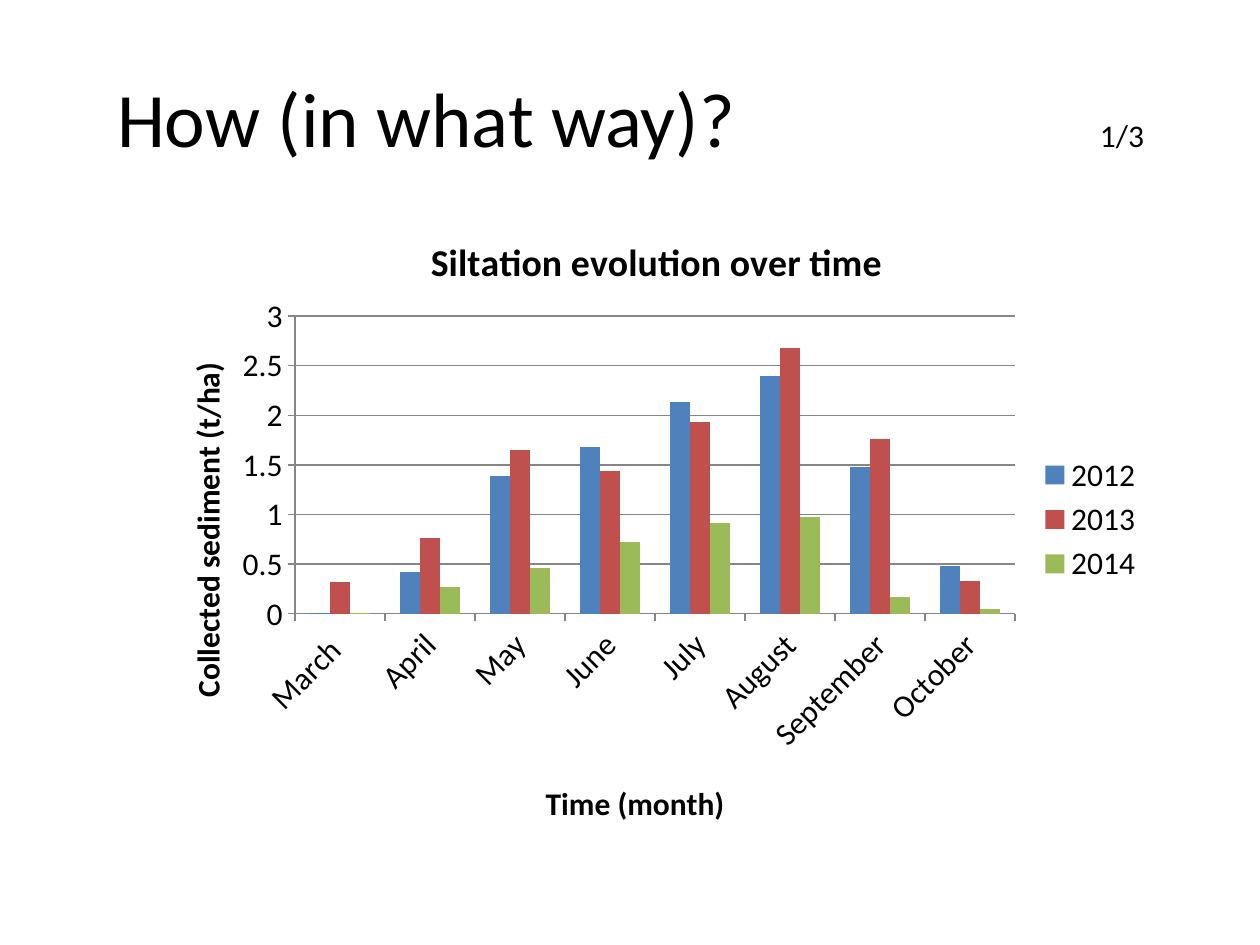
from lxml import etree
from pptx import Presentation
from pptx import util as u
from pptx.chart.data import CategoryChartData
from pptx.dml.color import RGBColor
from pptx.enum import chart as kinds, text
from pptx.oxml.ns import qn

SCALE = 914400 / 126
FONT = "Calibri"
COLOURS = {"text": "000000", "line": "868686",
           "2012": "4F81BD", "2013": "C0504D", "2014": "9BBB59"}
MONTHS = ["March ", "April", "May", "June", "July", "August", "September", "October"]
SEDIMENT = {
    "2012": [0.01, 0.42, 1.39, 1.68, 2.13, 2.39, 1.48, 0.48],
    "2013": [0.32, 0.76, 1.65, 1.44, 1.93, 2.68, 1.76, 0.33],
    "2014": [0.01, 0.27, 0.46, 0.72, 0.91, 0.98, 0.17, 0.05],
}


def px(length):
    """Turn px into EMU."""
    return u.Emu(round(length * SCALE))


def colour(name):
    """Look up a named colour."""
    return RGBColor.from_string(COLOURS[name])


def apply(target, **values):
    """Set each given attribute on the target."""
    for name, value in values.items():
        setattr(target, name, value)


def style_font(font, size, bold=False):
    """Give a font the deck's typeface and colour."""
    apply(font, name=FONT, size=u.Pt(size), bold=bold)
    font.color.rgb = colour("text")


def set_layout(parent, index, box, **fractions):
    """Fix a chart part at px within the chart box."""
    for old in parent.findall(qn("c:layout")):
        parent.remove(old)
    layout = etree.Element(qn("c:layout"))
    manual = etree.SubElement(layout, qn("c:manualLayout"))
    if "w" in fractions:
        etree.SubElement(manual, qn("c:layoutTarget"), val="inner")
    for mode in ("xMode", "yMode"):
        etree.SubElement(manual, qn(f"c:{mode}"), val="edge")
    for name, length in fractions.items():
        whole = box[2] if name in "xw" else box[3]
        etree.SubElement(manual, qn(f"c:{name}"), val=f"{length / whole:.4f}")
    parent.insert(index, layout)


def add_title(page, box, heading, counter):
    """Place the heading at the left and the counter at a right tab."""
    title = page.shapes.title
    apply(title, **dict(zip(("left", "top", "width", "height"), map(px, box))))
    frame = title.text_frame
    apply(frame, word_wrap=True, vertical_anchor=text.MSO_ANCHOR.MIDDLE,
          auto_size=text.MSO_AUTO_SIZE.NONE, margin_left=px(54), margin_right=px(13))
    para = frame.paragraphs[0]
    para.alignment = text.PP_ALIGN.LEFT
    tabs = etree.SubElement(para._p.get_or_add_pPr(), qn("a:tabLst"))
    etree.SubElement(tabs, qn("a:tab"), pos=str(px(1027)), algn="r")
    for words, size in ((heading, 44), ("\t" + counter, 18)):
        span = para.add_run()
        span.text = words
        style_font(span.font, size)


def title_part(part, words, size, box, x, y):
    """Give a chart or axis a bold title at a fixed place."""
    title = part.chart_title if hasattr(part, "chart_title") else part.axis_title
    title.text_frame.text = words
    style_font(title.text_frame.paragraphs[0].runs[0].font, size, True)
    set_layout(title._element, 1, box, x=x, y=y)
    return title


def style_axis(axis):
    """Format the labels, line and ticks of an axis."""
    style_font(axis.tick_labels.font, 18)
    apply(axis, major_tick_mark=kinds.XL_TICK_MARK.OUTSIDE,
          minor_tick_mark=kinds.XL_TICK_MARK.NONE)
    style_line(axis.format.line)


def style_line(line):
    """Make a thin grey line."""
    line.color.rgb = colour("line")
    line.width = u.Pt(0.75)


def add_sediment_chart(page, box):
    """Place the clustered columns of sediment by month and year."""
    data = CategoryChartData()
    data.categories = MONTHS
    for year, values in SEDIMENT.items():
        data.add_series(year, values)
    chart = page.shapes.add_chart(
        kinds.XL_CHART_TYPE.COLUMN_CLUSTERED, *map(px, box), data).chart
    style_font(chart.font, 18)
    title_part(chart, "Siltation evolution over time", 21.6, box, 280, 33)

    months, amounts = chart.category_axis, chart.value_axis
    for axis in (months, amounts):
        style_axis(axis)
    title_part(months, "Time (month)", 18, box, 396, 581)
    label = title_part(amounts, "Collected sediment (t/ha)", 18, box, 36, 162)
    label.text_frame._txBody.bodyPr.set("rot", "-5400000")
    months._element.find(qn("c:txPr")).find(qn("a:bodyPr")).set("rot", "-2700000")
    apply(amounts, minimum_scale=0, maximum_scale=3, major_unit=0.5,
          has_major_gridlines=True)
    apply(amounts.tick_labels, number_format="General", number_format_is_linked=False)
    style_line(amounts.major_gridlines.format.line)

    plot = chart.plots[0]
    apply(plot, gap_width=150, overlap=0, vary_by_categories=False)
    for series in plot.series:
        series.format.fill.solid()
        series.format.fill.fore_color.rgb = colour(series.name)
    chart.has_legend = True
    apply(chart.legend, position=kinds.XL_LEGEND_POSITION.RIGHT, include_in_layout=False)
    style_font(chart.legend.font, 18)
    area = chart._chartSpace.chart.plotArea
    set_layout(area, 0, box, x=151, y=121, w=720, h=298)


def main():
    """Build and save the deck."""
    deck = Presentation()
    apply(deck, slide_width=px(1260), slide_height=px(945))
    page = deck.slides.add_slide(deck.slide_layouts[5])
    add_title(page, (63, 38, 1134, 157), "How (in what way)?", "1/3")
    add_sediment_chart(page, (144, 195, 1012, 649))
    deck.save("out.pptx")


if __name__ == "__main__":
    main()
